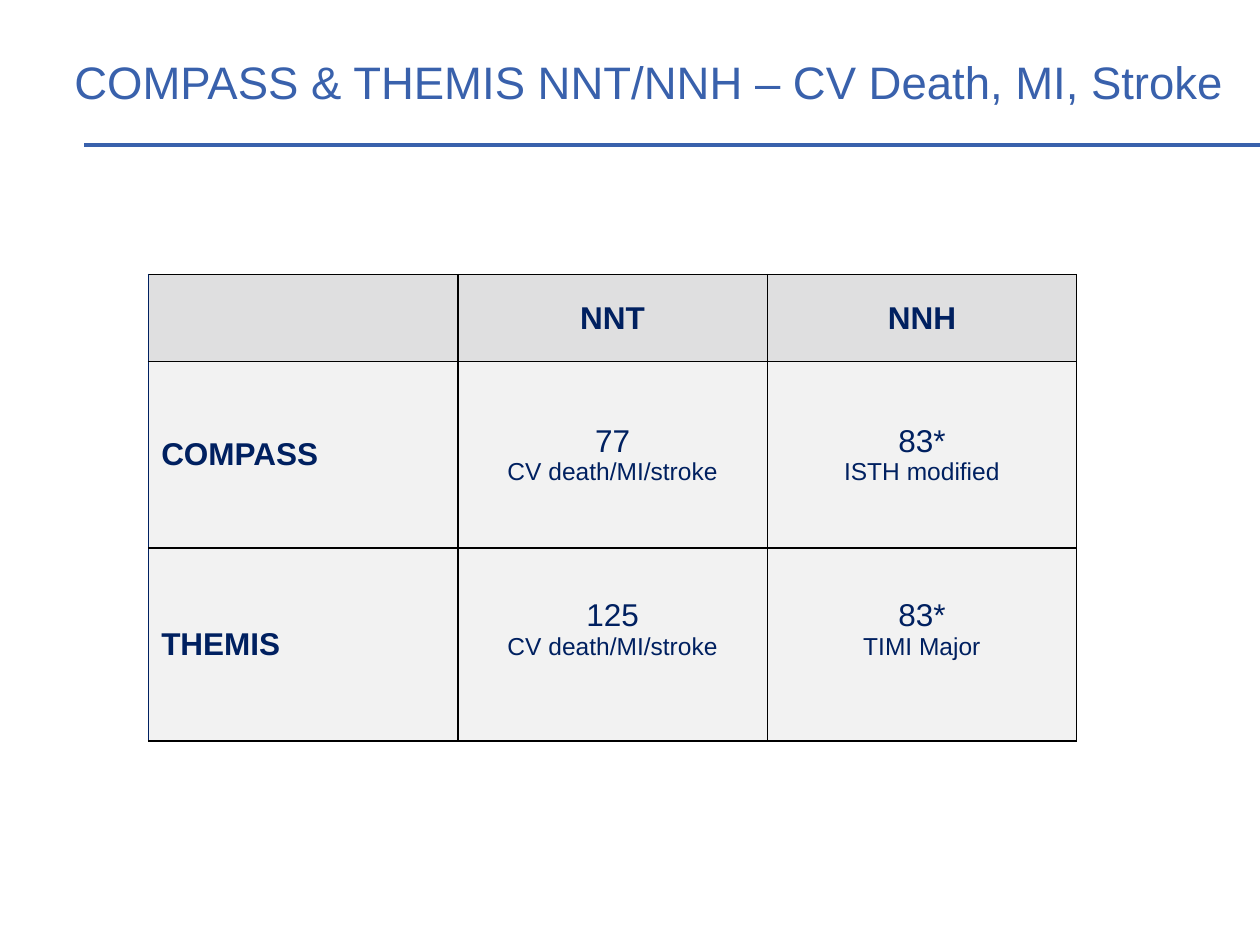
from lxml.etree import SubElement
from pptx import Presentation
from pptx.dml.color import RGBColor
from pptx.enum.shapes import MSO_CONNECTOR
from pptx.enum.text import MSO_ANCHOR as Anchor, PP_ALIGN as Align
from pptx.oxml.ns import qn
from pptx.util import Inches, Pt

BLUE = RGBColor(0x39, 0x61, 0xAC)
NAVY = RGBColor(0x00, 0x20, 0x60)
BLACK = RGBColor(0x00, 0x00, 0x00)
HEADER_GREY = RGBColor(0xDF, 0xDF, 0xE0)
BODY_GREY = RGBColor(0xF2, 0xF2, 0xF2)


def write(frame, lines, sizes, color=NAVY, bold=False, align=Align.LEFT):
    """Fill a text frame with one paragraph per line, each in its own size."""
    for index, (line, size) in enumerate(zip(lines, sizes)):
        para = frame.paragraphs[0] if index == 0 else frame.add_paragraph()
        para.alignment = align
        span = para.add_run()
        span.text = line
        span.font.name = "Arial"
        span.font.size = Pt(size)
        span.font.bold = bold
        span.font.color.rgb = color


def add_border(cell, side, color):
    edge = SubElement(cell._tc.get_or_add_tcPr(), qn(f"a:ln{side}"), w=str(Pt(1)))
    fill = SubElement(edge, qn("a:solidFill"))
    SubElement(fill, qn("a:srgbClr"), val=str(color))


deck = Presentation()
deck.slide_width, deck.slide_height = Inches(10), Inches(7.5)
page = deck.slides.add_slide(deck.slide_layouts[6])

# Title and the rule below it
rule = page.shapes.add_connector(
    MSO_CONNECTOR.STRAIGHT, Inches(0.67), Inches(1.15), deck.slide_width, Inches(1.15))
rule.line.color.rgb = BLUE
rule.line.width = Pt(2.25)
SubElement(rule._element.spPr, qn("a:effectLst"))

title = page.shapes.add_textbox(Inches(0.59), Inches(-0.02), Inches(9.21), Inches(0.88))
frame = title.text_frame
frame.word_wrap = True
frame.vertical_anchor = Anchor.BOTTOM
frame.margin_left = frame.margin_right = frame.margin_top = frame.margin_bottom = 0
write(frame, ["COMPASS & THEMIS NNT/NNH – CV Death, MI, Stroke"], [26], color=BLUE)

# Table: trial name, then value over its endpoint
rows = [
    [[], ["NNT"], ["NNH"]],
    [["COMPASS"], ["77", "CV death/MI/stroke"], ["83*", "ISTH modified"]],
    [["THEMIS"], ["125", "CV death/MI/stroke"], ["83*", "TIMI Major"]],
]
column_width = Inches(2.455)
row_heights = [Inches(0.69), Inches(1.48), Inches(1.53)]
table = page.shapes.add_table(
    len(rows), 3, Inches(1.18), Inches(2.18), 3 * column_width, sum(row_heights)).table
for column in table.columns:
    column.width = column_width

for r, (height, row) in enumerate(zip(row_heights, rows)):
    table.rows[r].height = height
    for c, lines in enumerate(row):
        cell = table.cell(r, c)
        heading = r == 0 or c == 0
        cell.vertical_anchor = Anchor.MIDDLE
        if r == 2 and not heading:
            cell.margin_bottom = Inches(0.29)  # lifts the last row's values
        for side in "LRTB":
            add_border(cell, side, NAVY if side == "L" and c == 0 else BLACK)
        cell.fill.solid()
        cell.fill.fore_color.rgb = HEADER_GREY if r == 0 else BODY_GREY
        write(cell.text_frame, lines, [18, 14], bold=heading,
              align=Align.LEFT if c == 0 else Align.CENTER)

deck.save("out.pptx")
